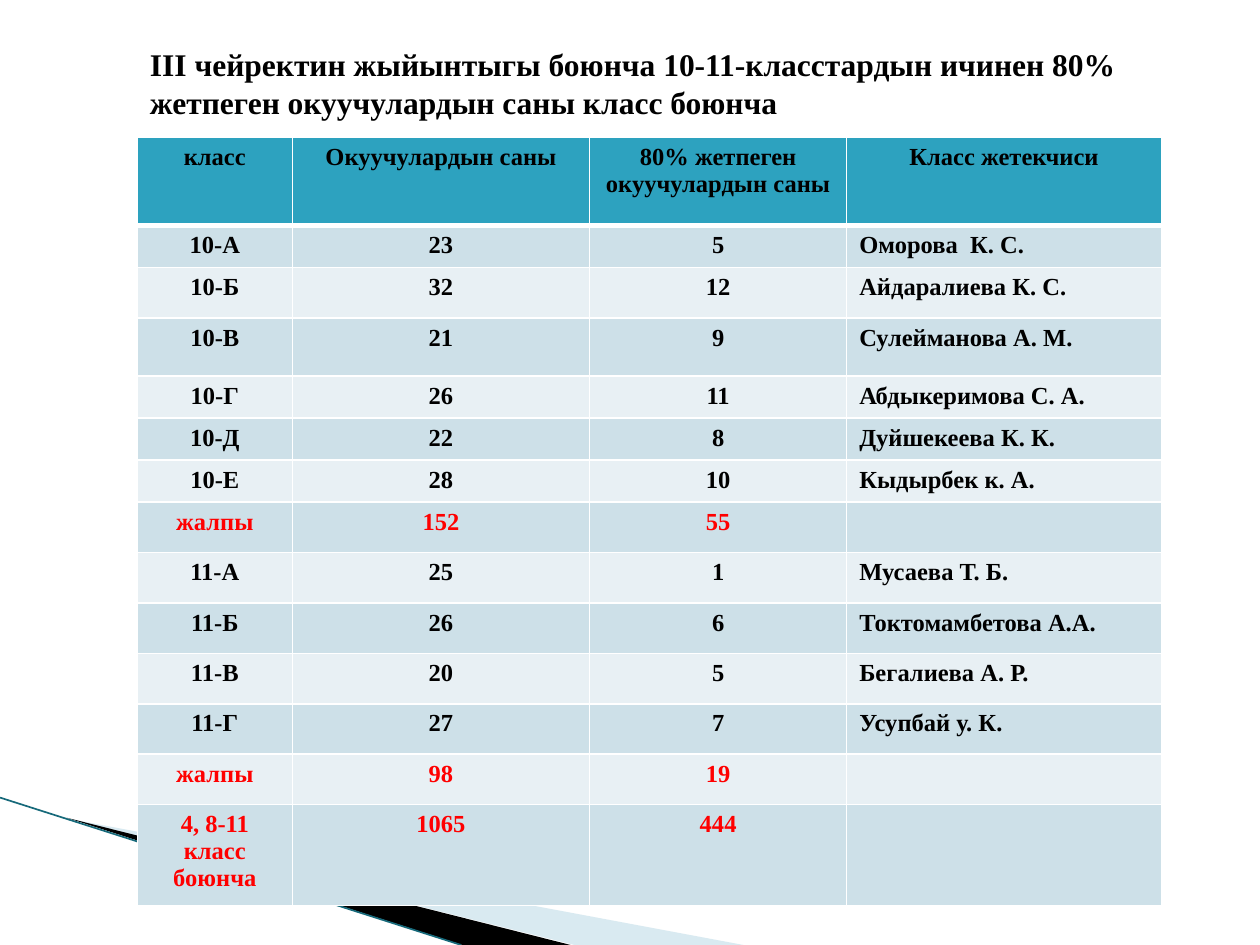
from typing import NamedTuple

import pptx
import pptx.dml.color
import pptx.enum.text
import pptx.oxml.ns
import pptx.util
from lxml import etree

Inches = pptx.util.Inches
Pt = pptx.util.Pt
ALIGN = pptx.enum.text.PP_ALIGN
qn = pptx.oxml.ns.qn

FONT = "Times New Roman"
BLACK, RED, WHITE = "000000", "FF0000", "FFFFFF"
HEADER_FILL = "2DA2BF"
BAND_FILLS = ("E8F0F4", "CDE0E8")


class Wedge(NamedTuple):
    points: list[tuple[float, float]]
    color: str
    opacity: int = 100


class Row(NamedTuple):
    height: float
    texts: tuple[str, str, str, str]
    color: str = BLACK


WEDGES = [
    Wedge([(0.55, 6.5), (5.9, 7.5), (4.56, 7.5)], "A0CBDC", 40),
    Wedge([(0.53, 6.49), (4.53, 7.5), (3.67, 7.5)], BLACK),
]
COL_WIDTHS = (1.23, 2.36, 2.04, 2.5)
ROWS = [
    Row(0.7, ("класс", "Окуучулардын саны", "80% жетпеген окуучулардын саны", "Класс жетекчиси")),
    Row(0.32, ("10-А", "23", "5", "Оморова  К. С.")),
    Row(0.4, ("10-Б", "32", "12", "Айдаралиева К. С.")),
    Row(0.46, ("10-В", "21", "9", "Сулейманова А. М.")),
    Row(0.33, ("10-Г", "26", "11", "Абдыкеримова С. А.")),
    Row(0.33, ("10-Д", "22", "8", "Дуйшекеева К. К.")),
    Row(0.33, ("10-Е", "28", "10", "Кыдырбек к. А.")),
    Row(0.4, ("жалпы", "152", "55", ""), RED),
    Row(0.4, ("11-А", "25", "1", "Мусаева Т. Б.")),
    Row(0.4, ("11-Б", "26", "6", "Токтомамбетова А.А.")),
    Row(0.4, ("11-В", "20", "5", "Бегалиева А. Р.")),
    Row(0.4, ("11-Г", "27", "7", "Усупбай у. К.")),
    Row(0.4, ("жалпы", "98", "19", ""), RED),
    Row(0.74, ("4, 8-11 класс боюнча", "1065", "444", ""), RED),
]


def rgb(color: str) -> pptx.dml.color.RGBColor:
    return pptx.dml.color.RGBColor.from_string(color)


def write(tf, text: str, *, size: float, color: str = BLACK, align=ALIGN.LEFT) -> None:
    p = tf.paragraphs[0]
    p.alignment = align
    if not text:
        p.font.size = Pt(size)
        return
    r = p.add_run()
    r.text = text
    r.font.name, r.font.size, r.font.bold = FONT, Pt(size), True
    r.font.color.rgb = rgb(color)


def draw_wedge(slide, wedge: Wedge) -> None:
    points = [(Inches(x), Inches(y)) for x, y in wedge.points]
    builder = slide.shapes.build_freeform(*points[0])
    builder.add_line_segments(points[1:], close=True)
    sp = builder.convert_to_shape()
    sp.shadow.inherit = False
    sp.line.fill.background()
    sp.fill.solid()
    sp.fill.fore_color.rgb = rgb(wedge.color)
    if wedge.opacity < 100:
        clr = sp.fill._xPr.find(".//" + qn("a:srgbClr"))
        etree.SubElement(clr, qn("a:alpha"), val=str(wedge.opacity * 1000))


def draw_edge_line(slide) -> None:
    line = slide.shapes.add_connector(1, 0, Inches(6.33), Inches(3.66), Inches(7.5))
    line.line.color.rgb = rgb("16697A")
    line.line.width = Pt(0.95)
    etree.SubElement(line._element.spPr, qn("a:effectLst"))


def set_borders(cell, top: float, bottom: float) -> None:
    tc_pr = cell._tc.get_or_add_tcPr()
    for side, width in (("L", 1), ("R", 1), ("T", top), ("B", bottom)):
        ln = etree.SubElement(tc_pr, qn("a:ln" + side), w=str(Pt(width)))
        fill = etree.SubElement(ln, qn("a:solidFill"))
        etree.SubElement(fill, qn("a:srgbClr"), val=WHITE)


def draw_table(slide) -> None:
    frame = slide.shapes.add_table(
        len(ROWS), len(COL_WIDTHS), Inches(1.09), Inches(1.09),
        Inches(sum(COL_WIDTHS)), Inches(sum(row.height for row in ROWS)))
    table = frame.table
    table.horz_banding = False
    for column, width in zip(table.columns, COL_WIDTHS):
        column.width = Inches(width)
    for i, row in enumerate(ROWS):
        table.rows[i].height = Inches(row.height)
        for j, text in enumerate(row.texts):
            cell = table.cell(i, j)
            set_borders(cell, top=3 if i == 1 else 1, bottom=3 if i == 0 else 1)
            cell.fill.solid()
            cell.fill.fore_color.rgb = rgb(BAND_FILLS[i % 2] if i else HEADER_FILL)
            is_name = i > 0 and j == 3
            write(cell.text_frame, text, size=14, color=row.color,
                  align=ALIGN.LEFT if is_name else ALIGN.CENTER)


def draw_title(slide) -> None:
    title = slide.shapes.title
    title.left, title.top = Inches(1.09), Inches(0.31)
    title.width, title.height = Inches(8.36), Inches(0.71)
    tf = title.text_frame
    tf.word_wrap = True
    tf.auto_size = pptx.enum.text.MSO_AUTO_SIZE.SHAPE_TO_FIT_TEXT
    tf.vertical_anchor = pptx.enum.text.MSO_ANCHOR.TOP
    write(tf, "III чейректин жыйынтыгы боюнча 10-11-класстардын ичинен 80% "
              "жетпеген окуучулардын саны класс боюнча", size=18)


def main() -> None:
    prs = pptx.Presentation()
    prs.slide_width, prs.slide_height = Inches(10), Inches(7.5)
    slide = prs.slides.add_slide(prs.slide_layouts[5])
    for wedge in WEDGES:
        draw_wedge(slide, wedge)
    draw_edge_line(slide)
    draw_table(slide)
    draw_title(slide)
    prs.save("out.pptx")


if __name__ == "__main__":
    main()
